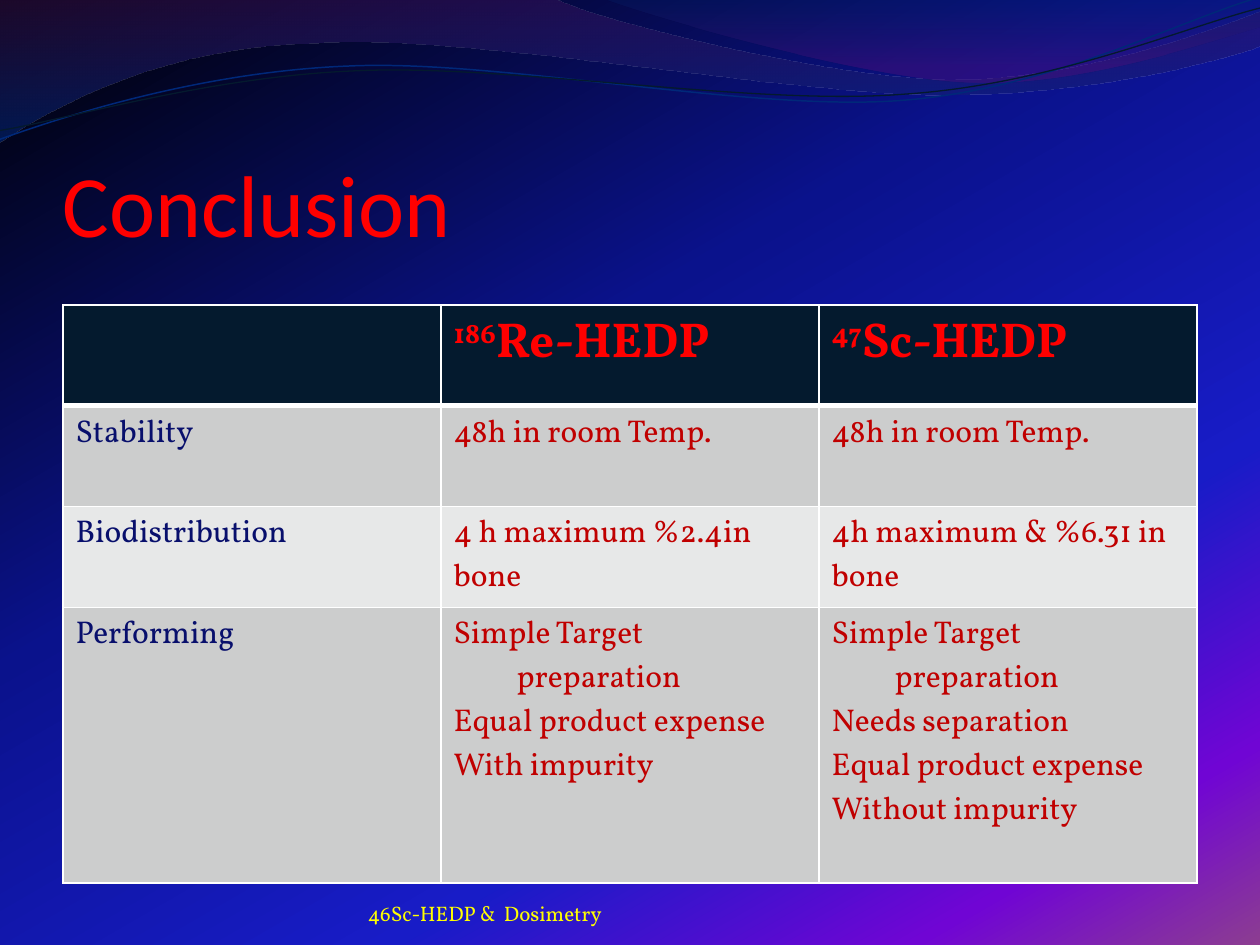
from lxml.etree import SubElement as Sub
from pptx import Presentation
from pptx.dml.color import RGBColor as Rgb
from pptx.enum.text import MSO_ANCHOR as Anchor
from pptx.oxml.ns import qn
from pptx.util import Inches, Pt

UNIT = Inches(1)
COLS, ROWS = 10, 7.5
HUES = {
    "red": "FF0000", "brick": "C00000", "navy": "080F6C", "yellow": "FFFF00",
    "white": "FFFFFF", "head": "041A2E", "odd": "CCCDCD", "even": "E7E8E8",
    "blue": "002879", "black": "000000", "deep": "0A128C", "royal": "181CC7",
    "violet": "7005D4", "mauve": "8C3D91", "plum": "3F145F", "sea": "00297C",
    "ink": "002165", "grape": "4C1079",
}
SKY = [(0, "black"), (40, "deep"), (70, "royal"), (88, "violet"), (100, "mauve")]
WAVES = [
    ([(0, 0), (4.4, -0.01),
      (4.76, 0.17, 6.64, 0.63, 7.58, 0.63), (8.53, 0.63, 9.58, 0.26, 10, 0.09),
      (10.01, 0.36), (9.83, 0.44, 8.7, 0.76, 7.46, 0.75),
      (6.22, 0.75, 3.82, 0.28, 2.57, 0.34), (1.29, 0.36, 0.46, 0.83, -0.01, 1.13)],
     [(0, "plum", 45), (100, "sea", 55)]),
    ([(4.79, -0.01), (5.09, 0.11, 6.82, 0.62, 7.69, 0.65),
      (8.56, 0.69, 9.61, 0.32, 10, 0.21), (10, 0)],
     [(0, "ink", 30), (80, "grape", 45)]),
]
TILT = 357.3
LINES = [
    ([(-0.02, 0.87), (0.47, 0.72, 1.58, 0.41, 2.77, 0.42),
      (3.96, 0.42, 5.91, 0.93, 7.12, 0.9), (8.32, 0.87, 9.4, 0.36, 10, 0.22)],
     "blue", 0.85),
    ([(-0.02, 0.8), (0.46, 0.75, 1.64, 0.45, 2.83, 0.46),
      (4.03, 0.46, 5.96, 0.89, 7.16, 0.85), (8.35, 0.83, 9.42, 0.42, 10.02, 0.3)],
     "head", 0.75),
]
HEADS = [("186", "Re-HEDP"), ("47", "Sc-HEDP")]
BODY = [
    (["Stability"], ["48h in room Temp."], ["48h in room Temp."]),
    (["Biodistribution"], ["4 h maximum %2.4in bone"], ["4h maximum & %6.31 in bone"]),
    (["Performing"],
     ["Simple Target preparation", "Equal product expense", "With impurity"],
     ["Simple Target preparation", "Needs separation", "Equal product expense",
      "Without impurity"]),
]


def grid(*spans):
    """Turn grid spans into whole lengths."""
    return [round(span * UNIT) for span in spans]


def tint(hue):
    """Look up a named colour."""
    return Rgb.from_string(HUES[hue])


def blend(fill, node, stops, angle):
    """Fill with a linear gradient of (place, hue, opacity) stops."""
    fill.gradient()
    grad = node.find(".//" + qn("a:gradFill"))
    for kid in list(grad):
        grad.remove(kid)
    group = Sub(grad, qn("a:gsLst"))
    for place, hue, *alpha in stops:
        stop = Sub(group, qn("a:gs"), pos=str(place * 1000))
        color = Sub(stop, qn("a:srgbClr"), val=HUES[hue])
        for share in alpha:
            Sub(color, qn("a:alpha"), val=str(share * 1000))
    Sub(grad, qn("a:lin"), ang=str(angle * 60000), scaled="0")


def bend(form, parts):
    """Turn the segments that have control points into cubic curves."""
    edges = form._element.findall(".//" + qn("a:lnTo"))
    for edge, part in zip(edges, parts):
        if len(part) == 2:
            continue
        edge.tag = qn("a:cubicBezTo")
        edge.remove(edge[0])
        spots = grid(*part)
        for x, y in zip(spots[::2], spots[1::2]):
            Sub(edge, qn("a:pt"), x=str(x - form.left), y=str(y - form.top))


def shape(slide, path, close):
    """Add a freeform along a path of corners and curves."""
    first, *rest = path
    pen = slide.shapes.build_freeform(*grid(*first), scale=1.0)
    pen.add_line_segments([grid(*part[-2:]) for part in rest], close=close)
    form = pen.convert_to_shape()
    bend(form, rest)
    form.shadow.inherit = False
    return form


def wave(slide, path, stops):
    """Add a closed wave with a clear gradient."""
    form = shape(slide, path, True)
    blend(form.fill, form._element.spPr, stops, 90)
    form.line.fill.background()


def curve(slide, path, hue, width):
    """Add an open, tilted, curved line."""
    form = shape(slide, path, False)
    form.rotation = TILT
    form.fill.background()
    form.line.color.rgb = tint(hue)
    form.line.width = Pt(width)


def write(frame, lines, hue="brick", size=18, font="Vollkorn", bold=False,
          sup="", hang=0):
    """Write paragraphs with an optional raised prefix and hanging indent."""
    frame.word_wrap = True
    for index, line in enumerate(lines):
        para = frame.add_paragraph() if index else frame.paragraphs[0]
        if hang:
            props = para._p.get_or_add_pPr()
            indent, = grid(hang)
            props.set("marL", str(indent))
            props.set("indent", str(-indent))
        for text, base in ((sup, 30), (line, 0)):
            if not text:
                continue
            run = para.add_run()
            run.text = text
            run.font.name, run.font.size, run.font.bold = font, Pt(size), bold
            run.font.color.rgb = tint(hue)
            if base:
                run.font._element.set("baseline", str(base * 1000))


def label(slide, area, text, top=0, **style):
    """Add a bottom-anchored text box."""
    frame = slide.shapes.add_textbox(*grid(*area)).text_frame
    frame.margin_left = frame.margin_right = frame.margin_bottom = 0
    frame.margin_top, = grid(top)
    frame.vertical_anchor = Anchor.BOTTOM
    write(frame, [text], **style)


def paint(cell, hue, base=1):
    """Fill a cell and rule its four sides in white."""
    props = cell._tc.get_or_add_tcPr()
    for side, width in (("L", 1), ("R", 1), ("T", 1), ("B", base)):
        edge = Sub(props, qn("a:ln" + side), w=str(Pt(width)))
        Sub(Sub(edge, qn("a:solidFill")), qn("a:srgbClr"), val=HUES["white"])
    cell.fill.solid()
    cell.fill.fore_color.rgb = tint(hue)


def chart(slide):
    """Add the table that compares both agents."""
    tall = [0.8, 0.8, 0.8, 2.19]
    area = grid(0.5, 2.42, 9, sum(tall))
    table = slide.shapes.add_table(len(tall), 3, *area).table
    for row, height in zip(table.rows, grid(*tall)):
        row.height = height
    for col in range(3):
        paint(table.cell(0, col), "head", 3)
    for col, (mass, name) in enumerate(HEADS, 1):
        write(table.cell(0, col).text_frame, [name], sup=mass, hue="red",
              size=28, bold=True)
    for row, items in enumerate(BODY, 1):
        for col, lines in enumerate(items):
            cell = table.cell(row, col)
            paint(cell, "odd" if row % 2 else "even")
            write(cell.text_frame, lines, hue="brick" if col else "navy",
                  hang=0.5 if len(lines) > 1 else 0)


def main():
    """Build and save the slide."""
    deck = Presentation()
    deck.slide_width, deck.slide_height = grid(COLS, ROWS)
    slide = deck.slides.add_slide(deck.slide_layouts[6])
    blend(slide.background.fill, slide._element, SKY, 60)
    for path, stops in WAVES:
        wave(slide, path, stops)
    for path, hue, width in LINES:
        curve(slide, path, hue, width)
    label(slide, (0.5, 0.77, 9, 1.25), "Conclusion", top=0.05, hue="red",
          size=50, font="Calibri")
    chart(slide)
    label(slide, (2.92, 6.95, 3.67, 0.4), "46Sc-HEDP &  Dosimetry",
          hue="yellow", size=12)
    deck.save("out.pptx")


if __name__ == "__main__":
    main()
